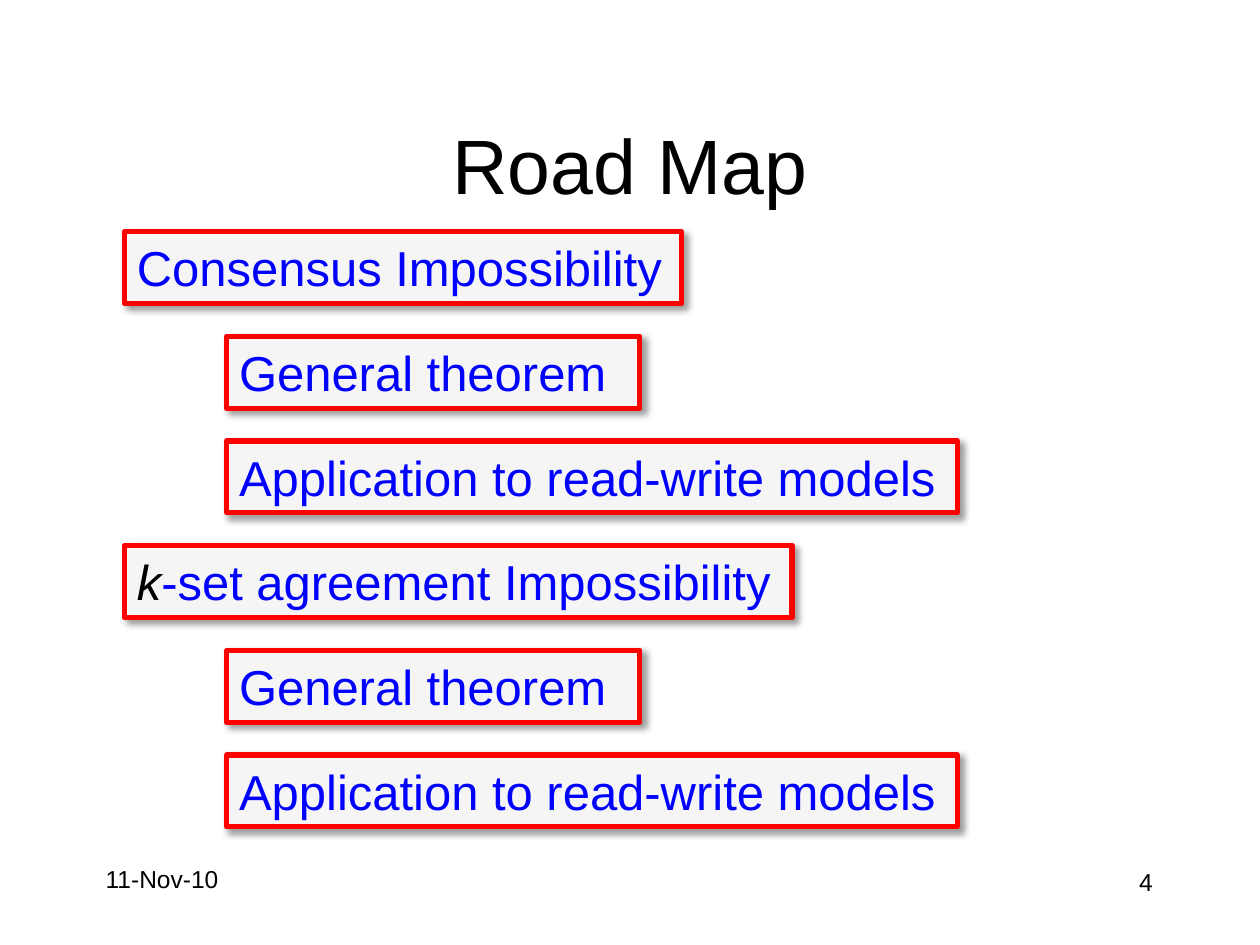
from lxml import etree
from pptx import Presentation
from pptx.dml.color import RGBColor
from pptx.enum import shapes, text
from pptx.oxml import ns
from pptx.util import Cm, Pt

BLACK, BLUE, RED, WHITE = "000000", "0000FF", "FF0000", "FFFFFF"
# indent level, box width in cm, runs of (words, colour, italic)
THEOREM = (1, 8.33, [("General theorem", BLUE, False)])
MODELS = (1, 14.73, [("Application to read-write models", BLUE, False)])
STEPS = [
    (0, 11.23, [("Consensus Impossibility", BLUE, False)]),
    THEOREM,
    MODELS,
    (0, 13.46, [("k", BLACK, True),
                ("-set agreement Impossibility", BLUE, False)]),
    THEOREM,
    MODELS,
]
# words, left, top, alignment
FOOTS = [
    ("11-Nov-10", 1.88, 17.3, text.PP_ALIGN.LEFT),
    ("4", 18.21, 17.35, text.PP_ALIGN.RIGHT),
]
LEFT, INDENT, TOP, PITCH, HEIGHT = 2.51, 2.06, 4.67, 2.11, 1.45


def rgb(code):
    return RGBColor.from_string(code)


def style(run, size, color=BLACK, italic=False):
    font = run.font
    font.name, font.size, font.italic = "Arial", Pt(size), italic
    font.color.rgb = rgb(color)


def add(parent, tag, **attrs):
    return etree.SubElement(parent, ns.qn(tag), attrs)


def shade(shape):
    """Make the white fill 90% opaque and cast a soft shadow."""
    props = shape.element.spPr
    fill = props.find(ns.qn("a:solidFill"))
    add(fill[0], "a:alpha", val="90000")
    shadow = add(props.find(ns.qn("a:effectLst")), "a:outerShdw",
                 blurRad=str(Pt(4)), dist=str(Pt(3)), dir="2700000",
                 algn="tl", rotWithShape="0")
    color = add(shadow, "a:srgbClr", val=BLACK)
    add(color, "a:alpha", val="40000")


def add_step(slide, row, level, width, runs):
    box = slide.shapes.add_shape(
        shapes.MSO_SHAPE.RECTANGLE, Cm(LEFT + level * INDENT),
        Cm(TOP + row * PITCH), Cm(width), Cm(HEIGHT))
    box.shadow.inherit = False
    box.fill.solid()
    box.fill.fore_color.rgb = rgb(WHITE)
    box.line.color.rgb = rgb(RED)
    box.line.width = Pt(3)
    shade(box)
    frame = box.text_frame
    frame.word_wrap = False
    frame.auto_size = text.MSO_AUTO_SIZE.SHAPE_TO_FIT_TEXT
    frame.vertical_anchor = text.MSO_ANCHOR.TOP
    para = frame.paragraphs[0]
    para.alignment = text.PP_ALIGN.LEFT
    for words, color, italic in runs:
        run = para.add_run()
        run.text = words
        style(run, 28, color, italic)


def add_foot(slide, words, left, top, align):
    box = slide.shapes.add_textbox(Cm(left), Cm(top), Cm(5.28), Cm(1.27))
    frame = box.text_frame
    frame.word_wrap = True
    frame.text = words
    para = frame.paragraphs[0]
    para.alignment = align
    style(para.runs[0], 14)


def main():
    deck = Presentation()
    deck.slide_width, deck.slide_height = Cm(25.4), Cm(19.05)
    slide = deck.slides.add_slide(deck.slide_layouts[5])

    title = slide.shapes.title
    title.left, title.top = Cm(1.9), Cm(1.7)
    title.width, title.height = Cm(21.6), Cm(3.18)
    title.text_frame.text = "Road Map"
    title.text_frame.vertical_anchor = text.MSO_ANCHOR.MIDDLE
    para = title.text_frame.paragraphs[0]
    para.alignment = text.PP_ALIGN.CENTER
    style(para.runs[0], 44)

    for foot in FOOTS:
        add_foot(slide, *foot)
    for row, step in enumerate(STEPS):
        add_step(slide, row, *step)
    deck.save("out.pptx")


if __name__ == "__main__":
    main()
